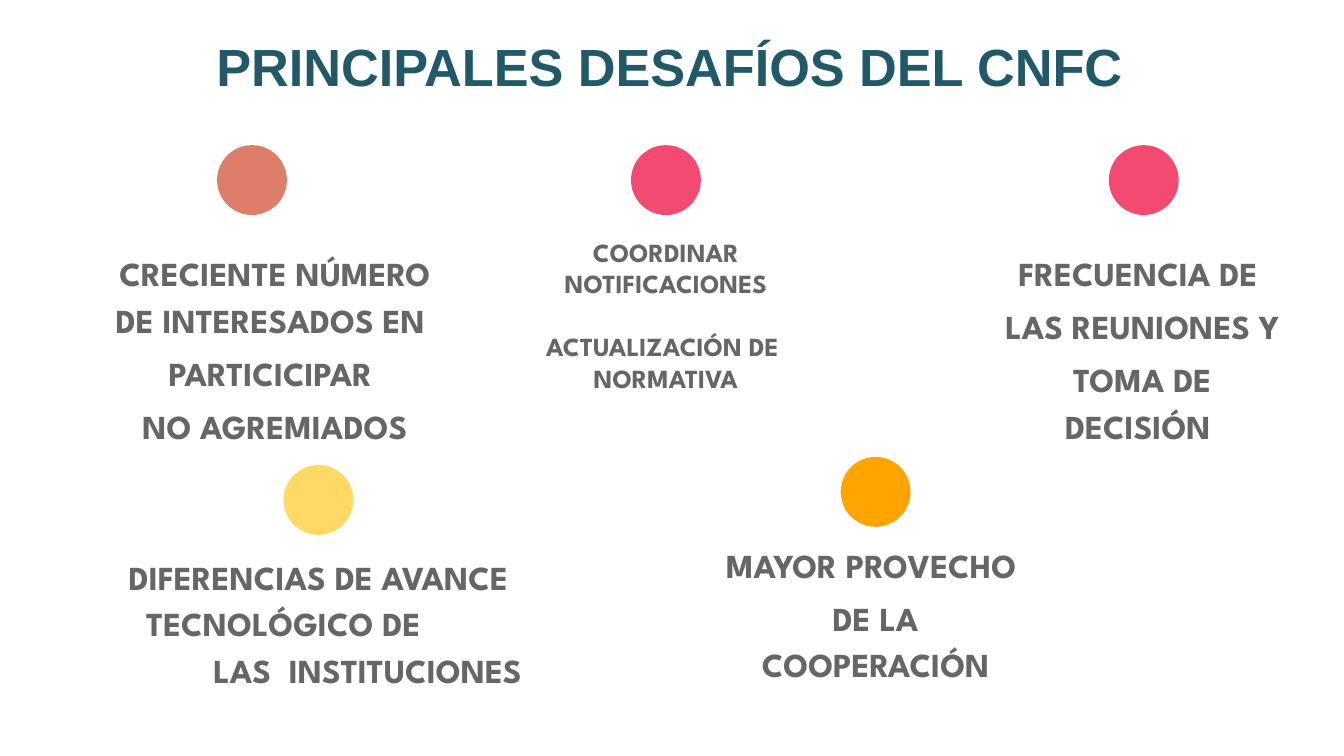
import pptx
import pptx.dml.color
import pptx.enum.shapes
import pptx.enum.text
import pptx.oxml.ns
import pptx.util
from lxml import etree

Inches = pptx.util.Inches
Pt = pptx.util.Pt
ALIGN = pptx.enum.text.PP_ALIGN
COLORS = {
    "title": "215968", "text": "666666", "coral": "DD7E6B",
    "red": "ED0036", "yellow": "FFD966", "orange": "FFA400",
}
CIRCLE_SIZE = 0.52


def get_color(name):
    """Return the named palette colour."""
    return pptx.dml.color.RGBColor.from_string(COLORS[name])


def add_run(paragraph, text, font_name, size, color):
    """Append a bold run to a paragraph."""
    run = paragraph.add_run()
    run.text = text
    run.font.name = font_name
    run.font.size = Pt(size)
    run.font.bold = True
    run.font.color.rgb = get_color(color)


def format_title(slide, box, text):
    """Place and fill the slide title in its box."""
    title = slide.shapes.title
    title.left, title.top, title.width, title.height = map(Inches, box)
    frame = title.text_frame
    frame.word_wrap = True
    frame.vertical_anchor = pptx.enum.text.MSO_ANCHOR.MIDDLE
    frame.margin_left = frame.margin_right = frame.margin_top = frame.margin_bottom = 0
    paragraph = frame.paragraphs[0]
    paragraph.alignment = ALIGN.CENTER
    add_run(paragraph, text, "Arial", 28, "title")


def add_circle(slide, left, top, color, opacity):
    """Draw a filled marker circle."""
    circle = slide.shapes.add_shape(
        pptx.enum.shapes.MSO_SHAPE.OVAL,
        *map(Inches, (left, top, CIRCLE_SIZE, CIRCLE_SIZE)))
    circle.shadow.inherit = False
    circle.line.fill.background()
    circle.fill.solid()
    circle.fill.fore_color.rgb = get_color(color)
    if opacity < 100:
        tag = pptx.oxml.ns.qn("a:srgbClr")
        fill_color = next(circle.element.spPr.iter(tag))
        alpha = etree.SubElement(fill_color, pptx.oxml.ns.qn("a:alpha"))
        alpha.set("val", str(opacity * 1000))


def add_topic(slide, box, lines, color, gap, shift=0, opacity=100, size=18,
              line_spacing=1.15, spaces=None, indents=None):
    """Place a marker circle at the top of the box and its text below."""
    left, top, width, height = box
    add_circle(slide, left + (width - CIRCLE_SIZE) / 2 + shift, top, color, opacity)
    text_box = slide.shapes.add_textbox(
        *map(Inches, (left, top + gap, width, height - gap)))
    frame = text_box.text_frame
    frame.word_wrap = True
    spaces = spaces or [0] + [3.6] * (len(lines) - 1)
    for index, line in enumerate(lines):
        paragraph = frame.paragraphs[0] if index == 0 else frame.add_paragraph()
        paragraph.alignment = ALIGN.LEFT if indents else ALIGN.CENTER
        paragraph.line_spacing = line_spacing
        paragraph.space_before = Pt(spaces[index])
        if indents:
            properties = paragraph._p.get_or_add_pPr()
            properties.set("marL", str(Inches(indents[index])))
            properties.set("indent", "0")
        add_run(paragraph, line, "League Spartan", size, "text")


def main():
    """Build the slide of challenges and save it."""
    presentation = pptx.Presentation()
    presentation.slide_width = Inches(10)
    presentation.slide_height = Inches(10 * 9 / 16)
    slide = presentation.slides.add_slide(presentation.slide_layouts[5])
    format_title(slide, (-0.02, 0, 10, 0.97), "PRINCIPALES DESAFÍOS DEL CNFC")
    add_topic(slide, (0.67, 1.08, 2.75, 1.77),
              ["CRECIENTE NÚMERO DE INTERESADOS EN ", "PARTICICIPAR ", "NO AGREMIADOS"],
              "coral", gap=0.71, shift=-0.17)
    add_topic(slide, (3.66, 1.08, 2.59, 2.25),
              ["COORDINAR", "NOTIFICACIONES", "ACTUALIZACIÓN DE ", "NORMATIVA"],
              "red", gap=0.63, opacity=71, size=14, line_spacing=1,
              spaces=[0, 0, 16.8, 0])
    add_topic(slide, (7.36, 1.08, 2.28, 1.58),
              ["FRECUENCIA DE ", "LAS REUNIONES Y ", "TOMA DE DECISIÓN "],
              "red", gap=0.71, shift=0.01, opacity=71)
    add_topic(slide, (0.86, 3.46, 3.3, 1.57),
              ["DIFERENCIAS DE AVANCE", "TECNOLÓGICO DE", "LAS  INSTITUCIONES"],
              "yellow", gap=0.59, shift=-0.14, spaces=[0, 0, 0],
              indents=[0, 0.13, 0.63])
    add_topic(slide, (5.27, 3.4, 2.49, 1.72),
              ["MAYOR PROVECHO ", "DE LA COOPERACIÓN"], "orange", gap=0.56)
    presentation.save("out.pptx")


if __name__ == "__main__":
    main()
